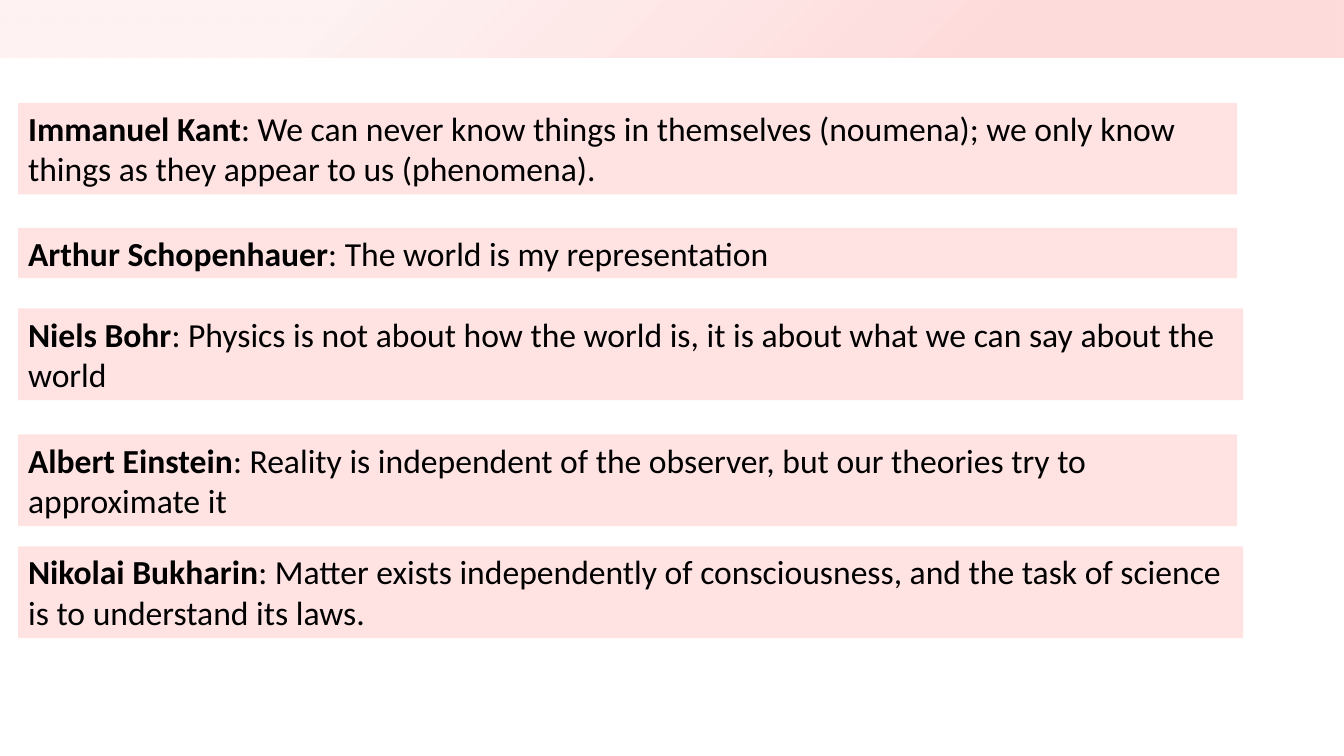
from dataclasses import dataclass

from lxml import etree
from pptx import Presentation
from pptx import util as u
from pptx.dml.color import RGBColor
from pptx.enum import shapes, text
from pptx.oxml.ns import qn


@dataclass(frozen=True)
class Theme:
    font: str = "Calibri"
    quote_size: int = 24
    ink: str = "000000"
    panel: str = "FFE3E3"
    band: str = "FF0000"
    band_stops: tuple = ((26, 14), (76, 5))  # position %, opacity %


class SlideBuilder:
    def __init__(self, slide, theme):
        self.slide = slide
        self.theme = theme

    def header_band(self, width, height):
        """Rectangle with a radial fade from its lower right corner."""
        band = self.slide.shapes.add_shape(
            shapes.MSO_SHAPE.RECTANGLE, 0, 0, u.Inches(width), u.Inches(height))
        band.shadow.inherit = False
        band.line.fill.background()
        band.fill.gradient()
        gradient = band.element.spPr.find(qn("a:gradFill"))
        for child in list(gradient):
            gradient.remove(child)
        stops = etree.SubElement(gradient, qn("a:gsLst"))
        for position, opacity in self.theme.band_stops:
            stop = etree.SubElement(stops, qn("a:gs"), pos=str(position * 1000))
            color = etree.SubElement(stop, qn("a:srgbClr"), val=self.theme.band)
            etree.SubElement(color, qn("a:alpha"), val=str(opacity * 1000))
        fade = etree.SubElement(gradient, qn("a:path"), path="circle")
        etree.SubElement(fade, qn("a:fillToRect"), l="100000", t="100000")

    def quote(self, left, top, width, height, thinker, saying):
        """Filled text box: bold name, then the saying."""
        panel = self.slide.shapes.add_textbox(
            *(u.Inches(length) for length in (left, top, width, height)))
        panel.fill.solid()
        panel.fill.fore_color.rgb = RGBColor.from_string(self.theme.panel)
        frame = panel.text_frame
        frame.word_wrap = True
        frame.auto_size = text.MSO_AUTO_SIZE.SHAPE_TO_FIT_TEXT
        for words, bold in ((thinker, True), (f": {saying}", False)):
            run = frame.paragraphs[0].add_run()
            run.text = words
            run.font.name = self.theme.font
            run.font.size = u.Pt(self.theme.quote_size)
            run.font.bold = bold
            run.font.color.rgb = RGBColor.from_string(self.theme.ink)


# Panel measures in inches
LEFT = 0.18
NARROW, WIDE = 12.09, 12.15
ONE_LINE, TWO_LINES = 0.5, 0.91

# Top, width, height, thinker, saying
QUOTES = (
    (1.02, NARROW, TWO_LINES, "Immanuel Kant",
     "We can never know things in themselves (noumena); "
     "we only know things as they appear to us (phenomena)."),
    (2.26, NARROW, ONE_LINE, "Arthur Schopenhauer",
     "The world is my representation"),
    (3.06, WIDE, TWO_LINES, "Niels Bohr",
     "Physics is not about how the world is, "
     "it is about what we can say about the world"),
    (4.31, NARROW, TWO_LINES, "Albert Einstein",
     "Reality is independent of the observer, "
     "but our theories try to approximate it"),
    (5.42, WIDE, TWO_LINES, "Nikolai Bukharin",
     "Matter exists independently of consciousness, "
     "and the task of science is to understand its laws."),
)


def main():
    deck = Presentation()
    deck.slide_width, deck.slide_height = u.Inches(13.33), u.Inches(7.5)
    builder = SlideBuilder(deck.slides.add_slide(deck.slide_layouts[6]), Theme())

    # Header
    builder.header_band(13.33, 0.57)

    # Quotes
    for top, width, height, thinker, saying in QUOTES:
        builder.quote(LEFT, top, width, height, thinker, saying)

    deck.save("out.pptx")


if __name__ == "__main__":
    main()
